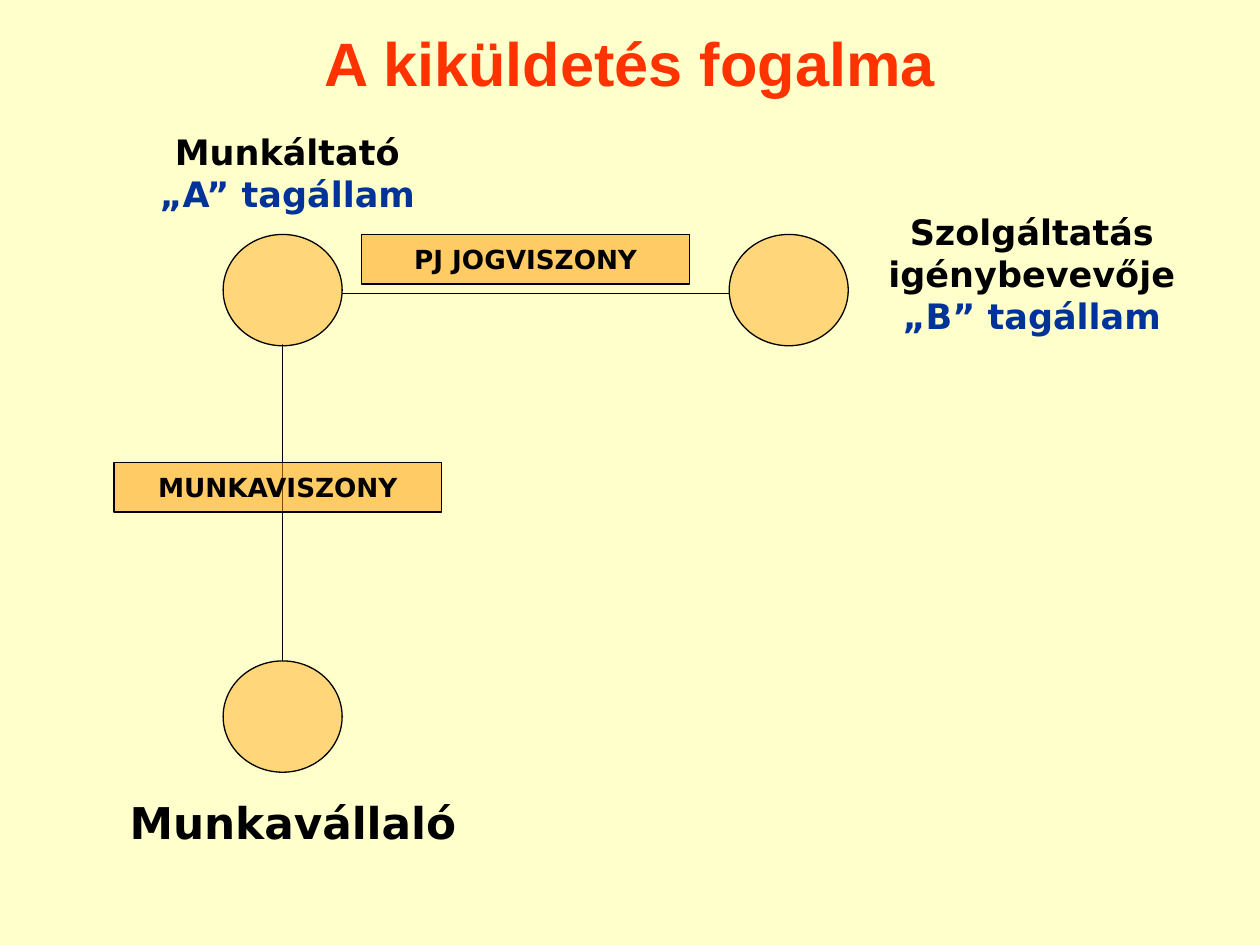
"""Build the slide on the concept of posting workers."""
from dataclasses import dataclass

from lxml import etree
from pptx import Presentation
from pptx.dml.color import RGBColor
from pptx.enum.shapes import MSO_CONNECTOR, MSO_SHAPE
from pptx.enum.text import MSO_ANCHOR, MSO_AUTO_SIZE, PP_ALIGN
from pptx.oxml.ns import qn
from pptx.util import Pt

OVAL, RECTANGLE = MSO_SHAPE.OVAL, MSO_SHAPE.RECTANGLE
STRAIGHT = MSO_CONNECTOR.STRAIGHT
TOP, MIDDLE = MSO_ANCHOR.TOP, MSO_ANCHOR.MIDDLE
CENTER = PP_ALIGN.CENTER
NO_AUTOFIT = MSO_AUTO_SIZE.NONE


@dataclass(frozen=True)
class Theme:
    background: RGBColor = RGBColor.from_string("FFFFCC")
    heading: RGBColor = RGBColor.from_string("FF3300")
    ink: RGBColor = RGBColor.from_string("000000")
    state: RGBColor = RGBColor.from_string("003399")
    accent: RGBColor = RGBColor.from_string("FF9900")
    heading_font: str = "Arial"
    body_font: str = "DejaVu Sans"
    heading_size: int = 35
    worker_size: int = 25
    party_size: int = 20
    relation_size: int = 15
    line_width: float = 0.75


theme = Theme()


def write(frame, text, *, size, font=theme.body_font, colors=(theme.ink,),
          anchor=TOP, margin_top=3.6):
    frame.word_wrap = True
    frame.auto_size = NO_AUTOFIT
    frame.vertical_anchor = anchor
    frame.margin_top = Pt(margin_top)
    frame.text = text
    for paragraph, color in zip(frame.paragraphs, colors):
        paragraph.alignment = CENTER
        run_font = paragraph.runs[0].font
        run_font.name, run_font.size, run_font.bold = font, Pt(size), True
        run_font.color.rgb = color


def add_translucent(kind, left, top, width, height, opacity):
    shape = slide.shapes.add_shape(kind, Pt(left), Pt(top), Pt(width), Pt(height))
    shape.shadow.inherit = False
    shape.fill.solid()
    shape.fill.fore_color.rgb = theme.accent
    color = shape.fill._xPr.find(qn("a:solidFill"))[0]
    etree.SubElement(color, qn("a:alpha")).set("val", str(opacity * 1000))
    shape.line.color.rgb = theme.ink
    shape.line.width = Pt(theme.line_width)
    return shape


presentation = Presentation()
presentation.slide_width, presentation.slide_height = Pt(720), Pt(540)
slide = presentation.slides.add_slide(presentation.slide_layouts[5])
slide.background.fill.solid()
slide.background.fill.fore_color.rgb = theme.background

heading = slide.shapes.title
heading.left, heading.top, heading.width, heading.height = Pt(0), Pt(8.6), Pt(720), Pt(49)
write(heading.text_frame, "A kiküldetés fogalma", size=theme.heading_size,
      font=theme.heading_font, colors=(theme.heading,), margin_top=6)

node_width, node_height = 68, 63.6
employer_x, client_x = 127.5, 416.7
employer_y, worker_y = 134, 377.7
employer_center = employer_x + node_width / 2
service_y = 167.8

for x1, y1, x2, y2 in (
    (employer_center, employer_y + node_height - 1, employer_center, worker_y),
    (employer_x + node_width, service_y, client_x, service_y),
):
    link = slide.shapes.add_connector(STRAIGHT, Pt(x1), Pt(y1), Pt(x2), Pt(y2))
    link.line.color.rgb = theme.ink
    link.line.width = Pt(theme.line_width)
    etree.SubElement(link._element.spPr, qn("a:effectLst"))

for x, y in ((employer_x, employer_y), (client_x, employer_y), (employer_x, worker_y)):
    add_translucent(OVAL, x, y, node_width, node_height, 40)

for text, x, y in (("PJ JOGVISZONY", 206.8, 134), ("MUNKAVISZONY", 65.2, 264.3)):
    relation = add_translucent(RECTANGLE, x, y, 187.2, 28.4, 50)
    write(relation.text_frame, text, size=theme.relation_size, anchor=MIDDLE)

for text, size, x, y, width, height in (
    ("Munkáltató\n„A” tagállam", theme.party_size, 82.1, 71.3, 164.2, 28.1),
    ("Szolgáltatás igénybevevője\n„B” tagállam", theme.party_size, 496.1, 116.6, 187.2, 96.5),
    ("Munkavállaló", theme.worker_size, 42.5, 451.4, 249.8, 28.1),
):
    party = slide.shapes.add_textbox(Pt(x), Pt(y), Pt(width), Pt(height))
    write(party.text_frame, text, size=size, colors=(theme.ink, theme.state))

presentation.save("out.pptx")
